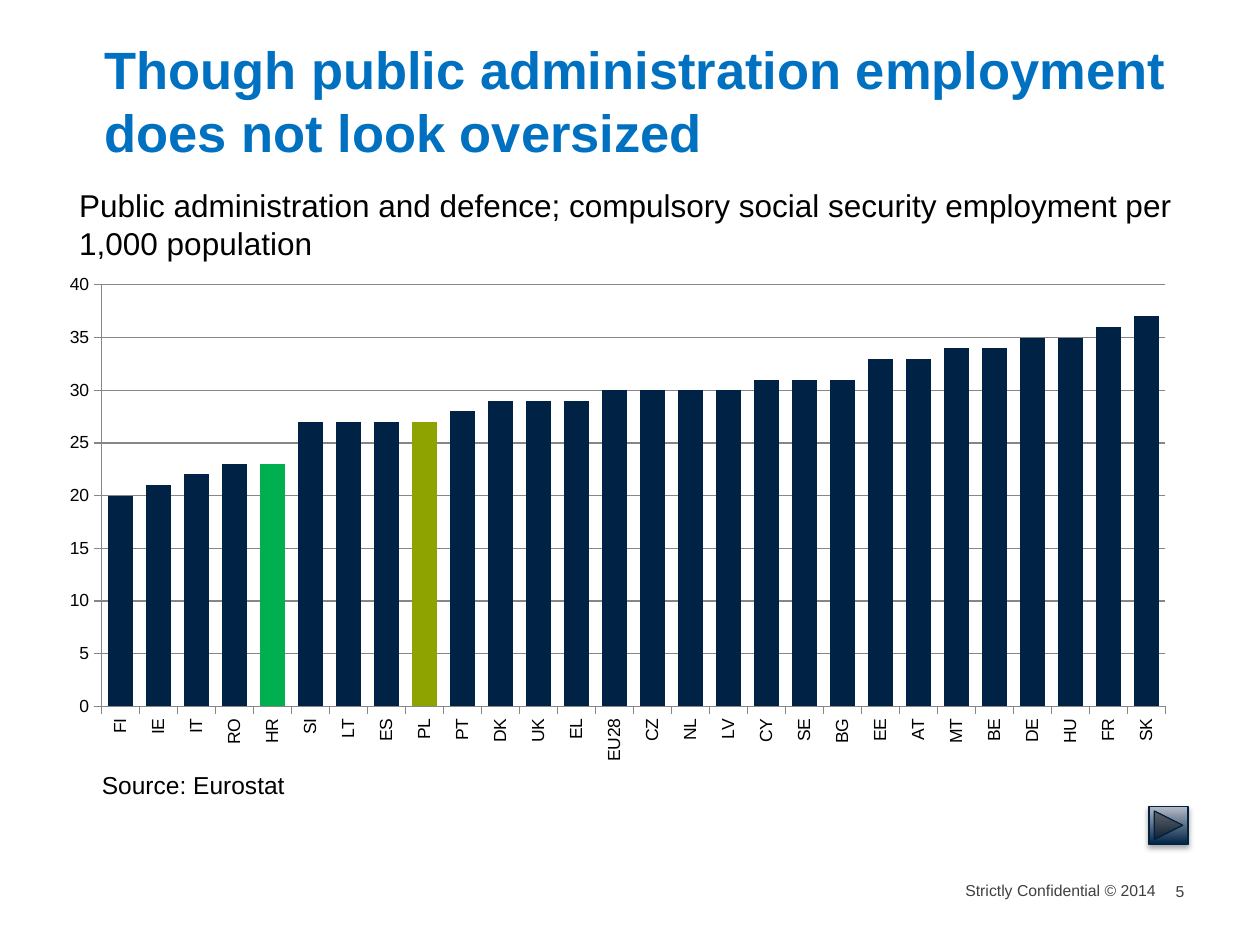
import lxml.etree
import pptx
import pptx.chart.data
import pptx.dml.color
import pptx.enum.chart
import pptx.enum.shapes
import pptx.enum.text
import pptx.oxml
import pptx.oxml.ns
import pptx.util

Pt = pptx.util.Pt
LEFT, RIGHT = pptx.enum.text.PP_ALIGN.LEFT, pptx.enum.text.PP_ALIGN.RIGHT
TOP, BOTTOM = pptx.enum.text.MSO_ANCHOR.TOP, pptx.enum.text.MSO_ANCHOR.BOTTOM
NAVY, GREEN, OLIVE = "002345", "00B050", "8EA300"
BLACK, BLUE, SLATE, GRID = "000000", "0070C0", "404040", "868686"
EMPLOYMENT = {
    "FI": 20, "IE": 21, "IT": 22, "RO": 23, "HR": 23, "SI": 27, "LT": 27,
    "ES": 27, "PL": 27, "PT": 28, "DK": 29, "UK": 29, "EL": 29, "EU28": 30,
    "CZ": 30, "NL": 30, "LV": 30, "CY": 31, "SE": 31, "BG": 31, "EE": 33,
    "AT": 33, "MT": 34, "BE": 34, "DE": 35, "HU": 35, "FR": 36, "SK": 37,
}
HIGHLIGHTS = {"HR": GREEN, "PL": OLIVE}


def color(value):
    return pptx.dml.color.RGBColor.from_string(value)


def apply(target, values):
    for name, value in values.items():
        setattr(target, name, value)


class SlideBuilder:
    """Holds the text style and the current slide, and adds elements to it."""

    font_name = "Arial"

    def __init__(self, slide):
        self.slide = slide

    def style_font(self, font, size, shade=BLACK, bold=False):
        apply(font, {"name": self.font_name, "size": Pt(size), "bold": bold})
        font.color.rgb = color(shade)

    def text(self, box, content, size, shade=BLACK, bold=False, align=LEFT,
             anchor=TOP, insets=(7.2, 3.6, 7.2, 3.6)):
        frame = self.slide.shapes.add_textbox(*map(Pt, box)).text_frame
        sides = ("margin_left", "margin_top", "margin_right", "margin_bottom")
        apply(frame, {"word_wrap": True, "vertical_anchor": anchor})
        apply(frame, dict(zip(sides, map(Pt, insets))))
        paragraph = frame.paragraphs[0]
        paragraph.alignment = align
        run = paragraph.add_run()
        run.text = content
        self.style_font(run.font, size, shade, bold)

    def column_chart(self, box, values, highlights, layout):
        data = pptx.chart.data.CategoryChartData()
        data.categories = list(values)
        data.add_series("Series 1", list(values.values()))
        kind = pptx.enum.chart.XL_CHART_TYPE.COLUMN_CLUSTERED
        chart = self.slide.shapes.add_chart(kind, *map(Pt, box), data).chart
        apply(chart, {"has_legend": False, "has_title": False})
        self.style_font(chart.font, 10)
        plot = chart.plots[0]
        apply(plot, {"gap_width": 50, "vary_by_categories": False})
        series = plot.series[0]
        series.format.fill.solid()
        series.format.fill.fore_color.rgb = color(NAVY)
        for category, shade in highlights.items():
            fill = series.points[list(values).index(category)].format.fill
            fill.solid()
            fill.fore_color.rgb = color(shade)
        self.chart_axes(chart)
        self.plot_layout(chart, layout)

    def chart_axes(self, chart):
        value_axis, category_axis = chart.value_axis, chart.category_axis
        apply(value_axis, {"minimum_scale": 0, "maximum_scale": 40,
                           "major_unit": 5, "has_major_gridlines": True})
        category_axis.has_major_gridlines = False
        for axis in (value_axis, category_axis):
            axis.major_tick_mark = pptx.enum.chart.XL_TICK_MARK.OUTSIDE
            self.style_font(axis.tick_labels.font, 10)
        for part in (value_axis, category_axis, value_axis.major_gridlines):
            part.format.line.color.rgb = color(GRID)
            part.format.line.width = Pt(0.75)
        for body in chart.element.xpath(".//c:catAx/c:txPr/a:bodyPr"):
            body.set("rot", "-5400000")
            body.set("vert", "horz")

    def plot_layout(self, chart, layout):
        area = chart.element.xpath(".//c:plotArea")[0]
        for old_layout in area.xpath("./c:layout"):
            area.remove(old_layout)
        settings = {"layoutTarget": "inner", "xMode": "edge", "yMode": "edge", **layout}
        items = "".join(f'<c:{name} val="{value}"/>' for name, value in settings.items())
        namespace = pptx.oxml.ns.nsdecls("c")
        area.insert(0, pptx.oxml.parse_xml(
            f"<c:layout {namespace}><c:manualLayout>{items}</c:manualLayout></c:layout>"))

    def forward_button(self, box):
        kind = pptx.enum.shapes.MSO_SHAPE.ACTION_BUTTON_FORWARD_OR_NEXT
        shape = self.slide.shapes.add_shape(kind, *map(Pt, box))
        shape.fill.gradient()
        shape.fill.gradient_angle = 90
        for stop, position, shade in zip(shape.fill.gradient_stops, (0, 1), (NAVY, "B8BBC6")):
            stop.position = position
            stop.color.rgb = color(shade)
        shape.line.color.rgb = color("002243")
        shape.line.width = Pt(0.75)
        shape.shadow.inherit = False
        qualified = pptx.oxml.ns.qn
        effects = shape.element.spPr.find(qualified("a:effectLst"))
        shadow = lxml.etree.SubElement(effects, qualified("a:outerShdw"), {
            "blurRad": str(Pt(3.1)), "dist": str(Pt(1.8)),
            "dir": "5400000", "rotWithShape": "0"})
        shade = lxml.etree.SubElement(shadow, qualified("a:srgbClr"), val=BLACK)
        lxml.etree.SubElement(shade, qualified("a:alpha"), val="35000")


def main():
    presentation = pptx.Presentation()
    apply(presentation, {"slide_width": Pt(720), "slide_height": Pt(540)})
    builder = SlideBuilder(presentation.slides.add_slide(presentation.slide_layouts[6]))
    footer = {"size": 9, "shade": SLATE, "insets": (0, 2.9, 0, 0)}
    builder.text((546.5, 500.4, 113.8, 17.3), "Strictly Confidential © 2014",
                 align=RIGHT, **footer)
    builder.text((59.8, 35.3, 640.8, 59),
                 "Though public administration employment does not look oversized",
                 30, BLUE, True, anchor=BOTTOM, insets=(0, 0, 0, 1.4))
    builder.text((671.8, 501.1, 22.3, 17.3), "5", **footer)
    builder.column_chart((25.2, 151.2, 653.8, 290.2), EMPLOYMENT, HIGHLIGHTS,
                         {"x": 0.05, "y": 0.04, "w": 0.93, "h": 0.83})
    builder.text((38.2, 103, 640.8, 51.1),
                 "Public administration and defence; compulsory social security "
                 "employment per 1,000 population", 18)
    builder.text((51.1, 436.3, 231.8, 24.5), "Source: Eurostat", 14)
    builder.forward_button((656.6, 460.8, 22.3, 21.6))
    presentation.save("out.pptx")


if __name__ == "__main__":
    main()
